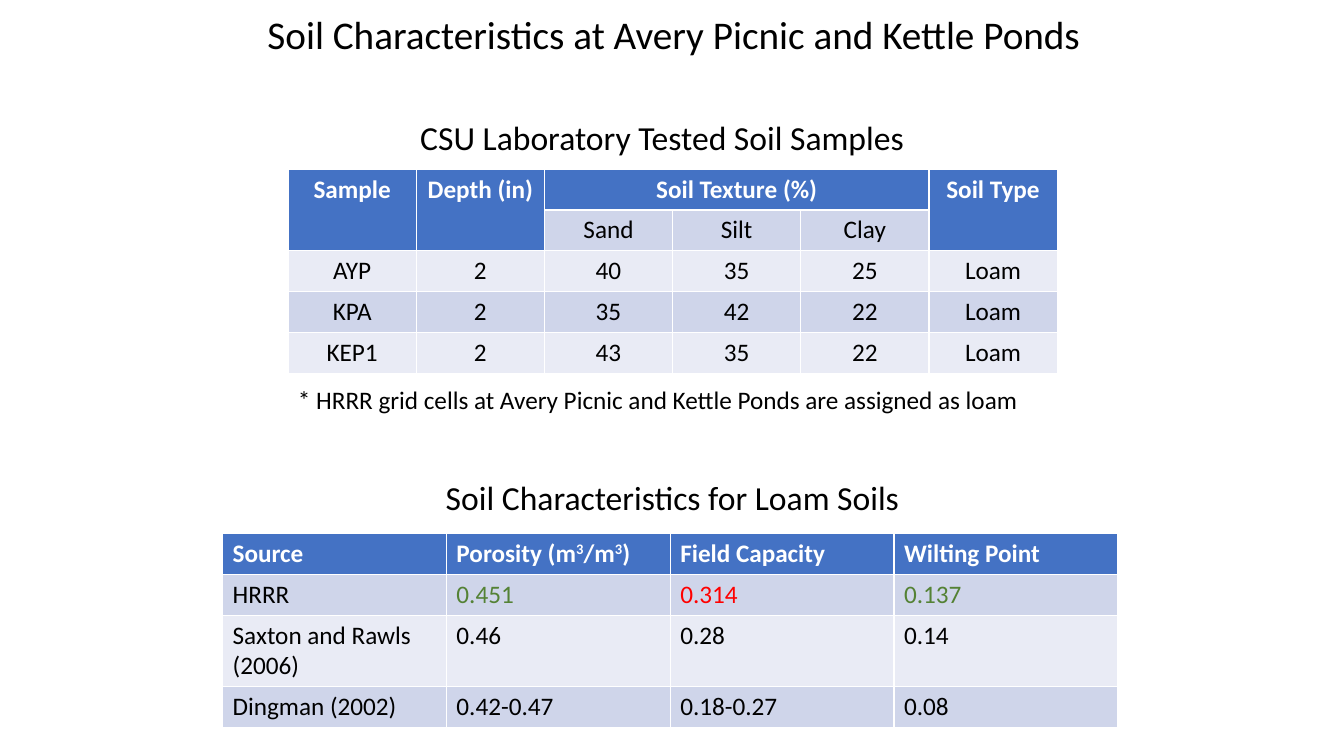
"""Build the soil characteristics slide with its two tables."""
from dataclasses import dataclass, field

from pptx import Presentation
from pptx.dml.color import RGBColor
from pptx.enum.text import MSO_AUTO_SIZE as Auto, PP_ALIGN as Align
from pptx.slide import Slide
from pptx.text.text import _Paragraph as Para
from pptx.util import Cm, Pt

FONT = "Calibri"
WHITE = RGBColor(0xFF, 0xFF, 0xFF)
BLACK = RGBColor(0x00, 0x00, 0x00)
BLUE = RGBColor(0x44, 0x72, 0xC4)
BANDS = (RGBColor(0xE9, 0xEB, 0xF5), RGBColor(0xCF, 0xD5, 0xEA))
GREEN = RGBColor(0x54, 0x82, 0x35)
RED = RGBColor(0xFF, 0x00, 0x00)


@dataclass
class Label:
    text: str
    left: float
    top: float
    width: float
    height: float
    size: int
    align: Align = Align.CENTER


@dataclass
class Grid:
    left: float
    top: float
    col: float
    rows: list[list[str]]
    align: Align = Align.LEFT
    spans: list[tuple[int, int, int, int]] = field(default_factory=list)
    tints: dict[tuple[int, int], RGBColor] = field(default_factory=dict)


ROW = 1.03
LOAM = Grid(
    5.61, 13.44, 5.64,
    [
        ["Source", "Porosity (m^3^/m^3^)", "Field Capacity", "Wilting Point"],
        ["HRRR", "0.451", "0.314", "0.137"],
        ["Saxton and Rawls (2006)", "0.46", "0.28", "0.14"],
        ["Dingman (2002)", "0.42-0.47", "0.18-0.27", "0.08"],
    ],
    tints={(1, 1): GREEN, (1, 2): RED, (1, 3): GREEN},
)
SAMPLES = Grid(
    7.26, 4.26, 3.23,
    [
        ["Sample", "Depth (in)", "Soil Texture (%)", "", "", "Soil Type"],
        ["", "", "Sand", "Silt", "Clay", ""],
        ["AYP", "2", "40", "35", "25", "Loam"],
        ["KPA", "2", "35", "42", "22", "Loam"],
        ["KEP1", "2", "43", "35", "22", "Loam"],
    ],
    Align.CENTER,
    [(0, 0, 1, 0), (0, 1, 1, 1), (0, 2, 0, 4), (0, 5, 1, 5)],
)
PARTS = [
    LOAM,
    Label("Soil Characteristics for Loam Soils", 0.23, 11.89, 33.43, 1.28, 24),
    Label("Soil Characteristics at Avery Picnic and Kettle Ponds",
          0.3, 0.13, 33.35, 1.45, 28),
    SAMPLES,
    Label("CSU Laboratory Tested Soil Samples", 7.01, 2.82, 19.35, 1.28, 24),
    Label("* HRRR grid cells at Avery Picnic and Kettle Ponds are assigned as loam",
          7.26, 9.55, 19.53, 1.03, 18, Align.LEFT),
]


def write(para: Para, text: str, size: int, align: Align,
          color: RGBColor = BLACK, bold: bool = False) -> None:
    """Fill a paragraph, raising the parts held between carets."""
    para.alignment = align
    font = para.font
    font.name, font.size, font.bold = FONT, Pt(size), bold
    font.color.rgb = color
    for place, part in enumerate(text.split("^")):
        run = para.add_run()
        run.text = part
        if place % 2:
            run.font._element.set("baseline", "30000")


def add_label(slide: Slide, label: Label) -> None:
    """Draw one line of text."""
    box = slide.shapes.add_textbox(Cm(label.left), Cm(label.top),
                                   Cm(label.width), Cm(label.height))
    frame = box.text_frame
    frame.word_wrap = True
    frame.auto_size = Auto.SHAPE_TO_FIT_TEXT
    write(frame.paragraphs[0], label.text, label.size, label.align)


def add_grid(slide: Slide, grid: Grid) -> None:
    """Draw one banded table."""
    high, wide = len(grid.rows), len(grid.rows[0])
    table = slide.shapes.add_table(high, wide, Cm(grid.left), Cm(grid.top),
                                   Cm(grid.col * wide), Cm(ROW * high)).table
    for top, left, bottom, right in grid.spans:
        table.cell(top, left).merge(table.cell(bottom, right))
    for row, texts in enumerate(grid.rows):
        for col, text in enumerate(texts):
            cell = table.cell(row, col)
            if cell.is_spanned:
                continue
            head = row == 0
            cell.fill.solid()
            cell.fill.fore_color.rgb = BLUE if head else BANDS[row % 2]
            tint = WHITE if head else grid.tints.get((row, col), BLACK)
            write(cell.text_frame.paragraphs[0], text, 18, grid.align, tint, head)


def main() -> None:
    """Make the slide and save it."""
    deck = Presentation()
    deck.slide_width, deck.slide_height = Cm(33.87), Cm(19.05)
    slide = deck.slides.add_slide(deck.slide_layouts[6])
    for part in PARTS:
        if isinstance(part, Grid):
            add_grid(slide, part)
        else:
            add_label(slide, part)
    deck.save("out.pptx")


if __name__ == "__main__":
    main()
